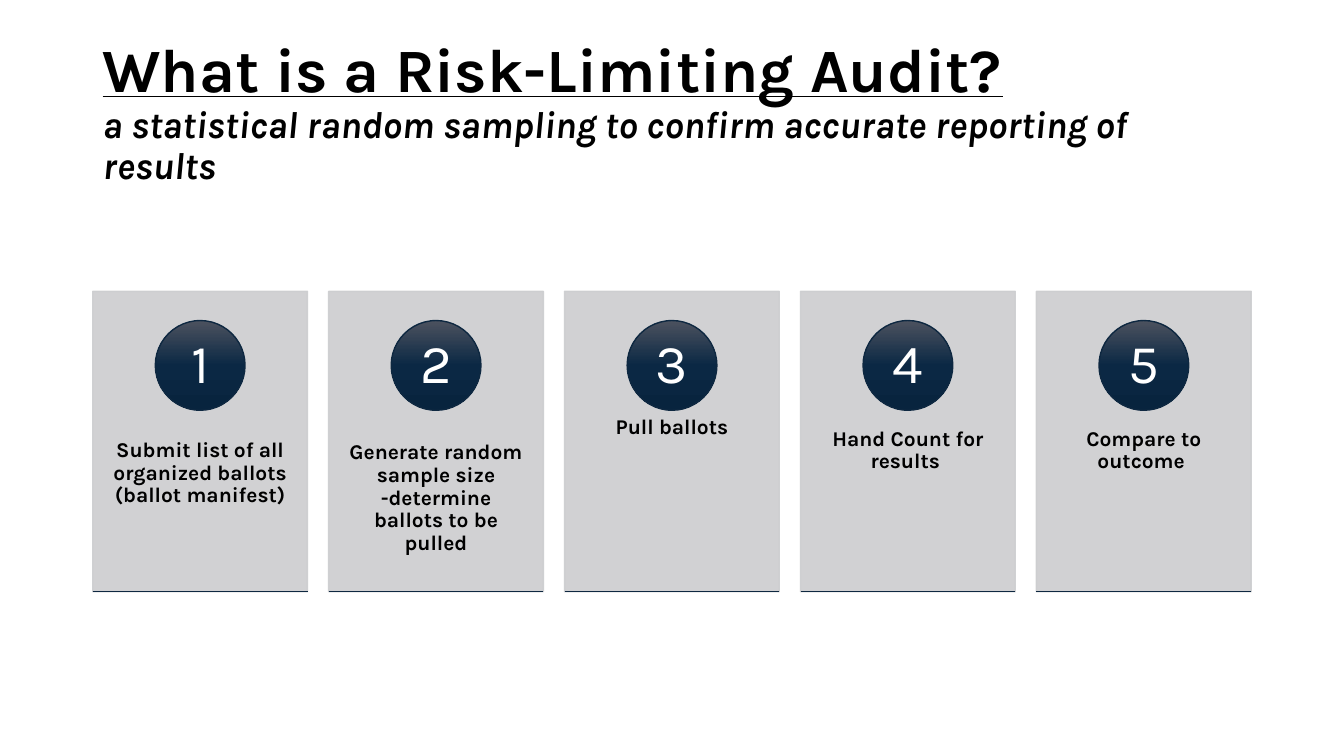
import copy
from dataclasses import dataclass

import pptx
import pptx.dml.color
import pptx.enum.shapes
import pptx.enum.text
import pptx.oxml.ns
import pptx.util
from lxml import etree
from pptx.util import Inches

SHAPE = pptx.enum.shapes.MSO_SHAPE
ALIGN = pptx.enum.text.PP_ALIGN
ANCHOR = pptx.enum.text.MSO_ANCHOR
qn = pptx.oxml.ns.qn


@dataclass(frozen=True)
class Theme:
    font: str = "Karla"
    black: str = "000000"
    white: str = "FFFFFF"
    card: str = "CCCDCF"
    navy: str = "0E2841"
    badge_stops: tuple = ((0, "4C525F"), (0.5, "0B2844"), (1, "08243E"))
    title_size: int = 44
    subtitle_size: int = 27
    number_size: int = 39
    step_size: int = 15


THEME = Theme()
STEPS = (
    "Submit list of all organized ballots (ballot manifest)",
    "Generate random sample size -determine ballots to be pulled",
    "Pull ballots",
    "Hand Count for results ",
    "Compare to outcome ",
)
LEFT, TOP, PITCH = 0.92, 2.89, 2.34
CARD_W, CARD_H = 2.13, 2.98
BADGE = 0.89


def rgb(value):
    return pptx.dml.color.RGBColor.from_string(value)


def add_text(p, text, size, color=THEME.black, bold=False, italic=False, underline=False):
    r = p.add_run()
    r.text = text
    font = r.font
    font.name, font.size = THEME.font, pptx.util.Pt(size)
    font.bold, font.italic, font.underline = bold, italic, underline
    font.color.rgb = rgb(color)


def set_frame(sp, insets, anchor=ANCHOR.TOP, align=ALIGN.LEFT):
    """Lay out the text frame and return its first paragraph."""
    tf = sp.text_frame
    tf.word_wrap = True
    tf.vertical_anchor = anchor
    tf.margin_left = tf.margin_right = Inches(insets[0])
    tf.margin_top = tf.margin_bottom = Inches(insets[1])
    p = tf.paragraphs[0]
    p.alignment, p.line_spacing = align, 0.9
    return p


def add_outlined(s, kind, x, y, w, h, line):
    sp = s.shapes.add_shape(kind, Inches(x), Inches(y), Inches(w), Inches(h))
    sp.shadow.inherit = False
    sp.line.color.rgb = rgb(line)
    sp.line.width = pptx.util.Pt(1)
    return sp


def set_alpha(fill, percent):
    """Make a solid fill partly transparent."""
    for color in fill.iter(qn("a:srgbClr")):
        etree.SubElement(color, qn("a:alpha")).set("val", str(percent * 1000))


def fill_gradient(sp, stops):
    """Fill from top to bottom through any number of stops."""
    sp.fill.gradient()
    sp.fill.gradient_angle = 270
    stop_list = next(sp.element.spPr.iter(qn("a:gsLst")))
    while len(stop_list) < len(stops):
        stop_list.append(copy.deepcopy(stop_list[0]))
    for stop, (position, color) in zip(sp.fill.gradient_stops, stops):
        stop.position = position
        stop.color.rgb = rgb(color)


def add_title(s):
    sp = s.shapes.add_textbox(Inches(LEFT), Inches(0.4), Inches(11.5), Inches(1.45))
    p = set_frame(sp, (0.1, 0.05), ANCHOR.MIDDLE)
    add_text(p, "What is a Risk-Limiting Audit?", THEME.title_size, bold=True, underline=True)
    p.add_line_break()
    add_text(p, "a statistical random sampling to confirm accurate reporting of results",
             THEME.subtitle_size, bold=True, italic=True)


def add_card(s, x):
    sp = add_outlined(s, SHAPE.RECTANGLE, x, TOP, CARD_W, CARD_H, THEME.card)
    sp.fill.solid()
    sp.fill.fore_color.rgb = rgb(THEME.card)
    set_alpha(sp.element.spPr, 90)


def add_step_text(s, x, text):
    sp = s.shapes.add_textbox(Inches(x), Inches(TOP + 1.13), Inches(CARD_W), Inches(1.79))
    p = set_frame(sp, (0.17, 0.36), align=ALIGN.CENTER)
    add_text(p, text, THEME.step_size, bold=True)


def add_badge(s, x, number):
    sp = add_outlined(s, SHAPE.OVAL, x + (CARD_W - BADGE) / 2, TOP + 0.29, BADGE, BADGE,
                      THEME.navy)
    fill_gradient(sp, THEME.badge_stops)
    p = set_frame(sp, (0.07, 0.01), ANCHOR.MIDDLE, ALIGN.CENTER)
    add_text(p, str(number), THEME.number_size, THEME.white)


def add_base_line(s, x):
    y = Inches(TOP + CARD_H)
    line = s.shapes.add_connector(pptx.enum.shapes.MSO_CONNECTOR.STRAIGHT,
                                  Inches(x), y, Inches(x + CARD_W), y)
    line.line.color.rgb = rgb(THEME.navy)
    line.line.width = pptx.util.Pt(1)
    etree.SubElement(line.element.spPr, qn("a:effectLst"))


def main():
    prs = pptx.Presentation()
    prs.slide_width, prs.slide_height = Inches(13.33), Inches(7.5)
    s = prs.slides.add_slide(prs.slide_layouts[6])
    add_title(s)
    for i, text in enumerate(STEPS):
        x = LEFT + i * PITCH
        add_card(s, x)
        add_step_text(s, x, text)
        add_badge(s, x, i + 1)
        add_base_line(s, x)
    prs.save("out.pptx")


if __name__ == "__main__":
    main()
